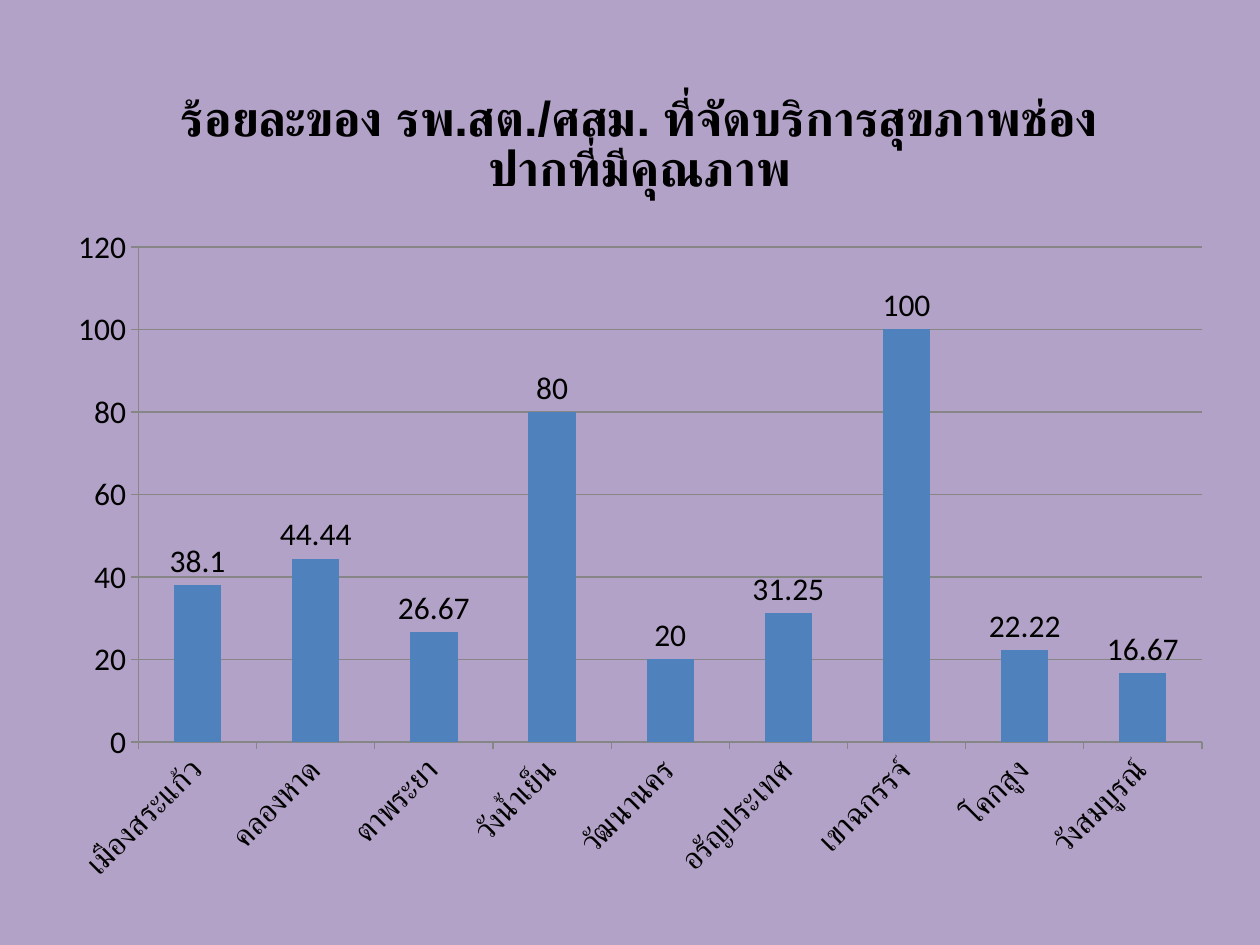
import pptx
import pptx.chart.data
import pptx.dml.color
import pptx.enum.chart
import pptx.oxml
import pptx.oxml.ns
import pptx.util
from pptx.util import Inches

COLORS = {"background": "B3A2C7", "bar": "4F81BD", "text": "000000", "line": "868686"}
TITLE = "ร้อยละของ รพ.สต./ศสม. ที่จัดบริการสุขภาพช่องปากที่มีคุณภาพ"
DISTRICTS = {
    "เมืองสระแก้ว": 38.1,
    "คลองหาด": 44.44,
    "ตาพระยา": 26.67,
    "วังน้ำเย็น": 80,
    "วัฒนานคร": 20,
    "อรัญประเทศ": 31.25,
    "เขาฉกรรจ์": 100,
    "โคกสูง": 22.22,
    "วังสมบูรณ์": 16.67,
}


def color(name):
    return pptx.dml.color.RGBColor.from_string(COLORS[name])


def format_font(font, size=18, name="Calibri", bold=False):
    font.size = pptx.util.Pt(size)
    font.name = name
    font.bold = bold
    font.color.rgb = color("text")


def add_title(chart, text):
    chart.has_title = True
    chart.chart_title.include_in_layout = False
    para = chart.chart_title.text_frame.paragraphs[0]
    span = para.add_run()
    span.text = text
    format_font(span.font, size=28, name="Arial", bold=True)


def place_plot(chart, box, plot_box):
    """Fix the inner plot area as fractions of the chart box."""
    left, top, width, height = box
    plot_left, plot_top, plot_width, plot_height = plot_box
    fractions = {
        "x": (plot_left - left) / width,
        "y": (plot_top - top) / height,
        "w": plot_width / width,
        "h": plot_height / height,
    }
    values = "".join(f'<c:{key} val="{part:.4f}"/>' for key, part in fractions.items())
    layout = pptx.oxml.parse_xml(
        f'<c:layout {pptx.oxml.ns.nsdecls("c")}><c:manualLayout>'
        '<c:layoutTarget val="inner"/><c:xMode val="edge"/><c:yMode val="edge"/>'
        f"{values}</c:manualLayout></c:layout>"
    )
    plot_area = chart.element.chart.plotArea
    for old in plot_area.findall(pptx.oxml.ns.qn("c:layout")):
        plot_area.remove(old)
    plot_area.insert(0, layout)


def format_axes(chart):
    for axis in (chart.category_axis, chart.value_axis):
        axis.major_tick_mark = pptx.enum.chart.XL_TICK_MARK.OUTSIDE
        axis.minor_tick_mark = pptx.enum.chart.XL_TICK_MARK.NONE
        axis.format.line.color.rgb = color("line")
        axis.format.line.width = pptx.util.Pt(0.75)
        format_font(axis.tick_labels.font)
    scale = chart.value_axis
    scale.minimum_scale, scale.maximum_scale, scale.major_unit = 0, 120, 20
    scale.has_major_gridlines = True
    scale.major_gridlines.format.line.color.rgb = color("line")
    scale.major_gridlines.format.line.width = pptx.util.Pt(0.75)

    # Slanted district names
    text_body = chart.category_axis.tick_labels.font._element.getparent().getparent().getparent()
    text_body.find(pptx.oxml.ns.qn("a:bodyPr")).set("rot", "-2700000")


def add_district_chart(page, box, plot_box):
    data = pptx.chart.data.CategoryChartData()
    data.categories = list(DISTRICTS)
    data.add_series(TITLE, list(DISTRICTS.values()))
    chart = page.shapes.add_chart(
        pptx.enum.chart.XL_CHART_TYPE.COLUMN_CLUSTERED, *box, data
    ).chart
    chart.has_legend = False
    format_font(chart.font)
    add_title(chart, TITLE)
    format_axes(chart)
    place_plot(chart, box, plot_box)

    # Bars and their values
    plot = chart.plots[0]
    plot.gap_width = 150
    plot.vary_by_categories = False
    bars = plot.series[0]
    bars.format.fill.solid()
    bars.format.fill.fore_color.rgb = color("bar")
    labels = bars.data_labels
    labels.show_value = True
    labels.position = pptx.enum.chart.XL_LABEL_POSITION.OUTSIDE_END
    format_font(labels.font)


def main():
    deck = pptx.Presentation()
    deck.slide_width, deck.slide_height = Inches(10), Inches(7.5)
    page = deck.slides.add_slide(deck.slide_layouts[6])
    page.background.fill.solid()
    page.background.fill.fore_color.rgb = color("background")
    add_district_chart(
        page,
        box=(Inches(0.43), Inches(0.44), Inches(9.29), Inches(6.69)),
        plot_box=(Inches(1.1), Inches(1.96), Inches(8.44), Inches(3.93)),
    )
    deck.save("out.pptx")


if __name__ == "__main__":
    main()
